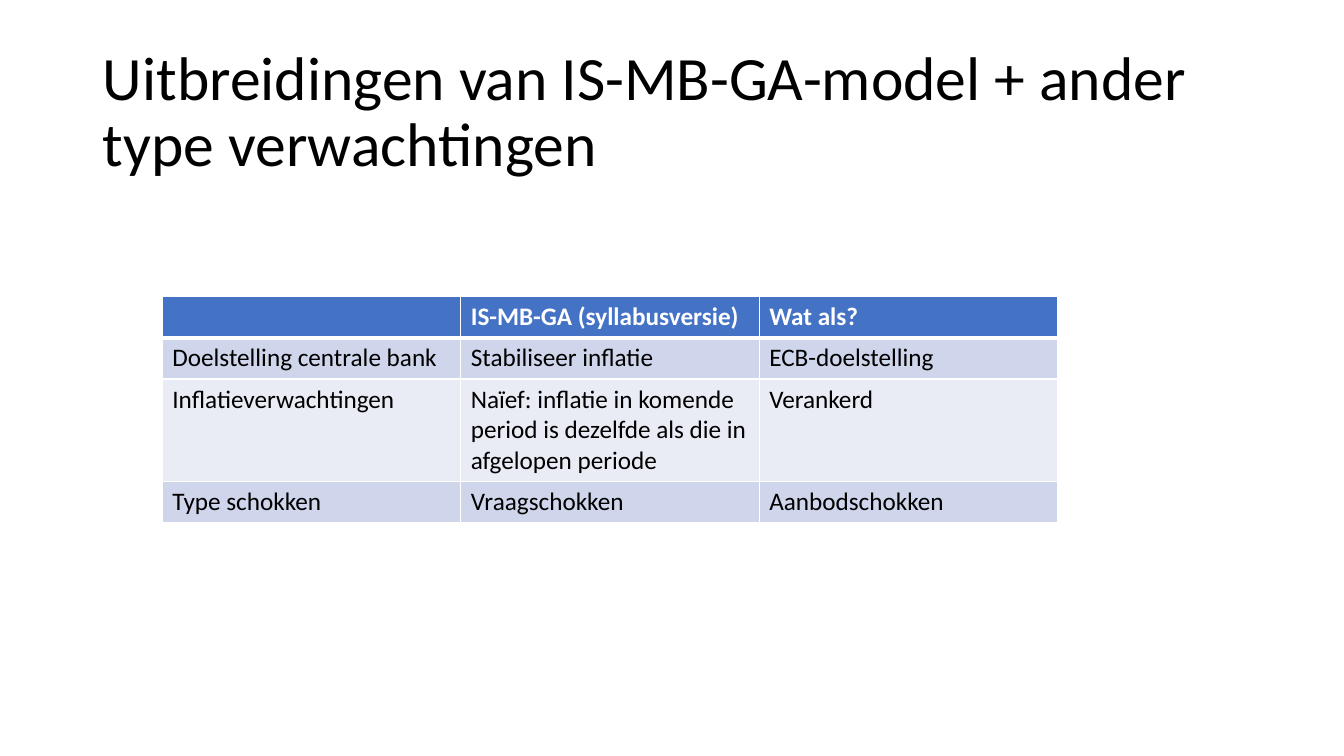
from dataclasses import dataclass

import lxml.etree
import pptx
import pptx.dml.color
import pptx.enum.text
import pptx.oxml.ns
import pptx.util

Inches = pptx.util.Inches
Pt = pptx.util.Pt


@dataclass(frozen=True)
class Theme:
    font: str = "Calibri"
    title_size: int = 44
    table_size: int = 18
    text: str = "000000"
    header_text: str = "FFFFFF"
    header_fill: str = "4472C4"
    bands: tuple = ("CFD5EA", "E9EBF5")
    border: str = "FFFFFF"
    border_width: int = 1
    header_rule: int = 3


class SlideBuilder:
    def __init__(self, presentation, theme):
        self.theme = theme
        self.slide = presentation.slides.add_slide(presentation.slide_layouts[5])

    def add_run(self, paragraph, text, size, color, bold=False):
        run = paragraph.add_run()
        run.text = text
        run.font.name = self.theme.font
        run.font.size = Pt(size)
        run.font.bold = bold
        run.font.color.rgb = pptx.dml.color.RGBColor.from_string(color)

    def title(self, text, left, top, width, height):
        title = self.slide.shapes.title
        title.left, title.top = Inches(left), Inches(top)
        title.width, title.height = Inches(width), Inches(height)
        frame = title.text_frame
        frame.word_wrap = True
        frame.auto_size = pptx.enum.text.MSO_AUTO_SIZE.NONE
        frame.vertical_anchor = pptx.enum.text.MSO_ANCHOR.MIDDLE
        paragraph = frame.paragraphs[0]
        paragraph.alignment = pptx.enum.text.PP_ALIGN.LEFT
        paragraph.line_spacing = 0.9
        self.add_run(paragraph, text, self.theme.title_size, self.theme.text)

    def cell_borders(self, cell, widths):
        properties = cell._tc.get_or_add_tcPr()
        for side, width in zip("LRTB", widths):
            line = lxml.etree.SubElement(
                properties, pptx.oxml.ns.qn(f"a:ln{side}"), w=str(Pt(width)))
            fill = lxml.etree.SubElement(line, pptx.oxml.ns.qn("a:solidFill"))
            lxml.etree.SubElement(
                fill, pptx.oxml.ns.qn("a:srgbClr"), val=self.theme.border)

    def table(self, rows, left, top, column_width, row_heights):
        theme = self.theme
        columns = len(rows[0])
        table = self.slide.shapes.add_table(
            len(rows), columns, Inches(left), Inches(top),
            Inches(column_width * columns), Inches(sum(row_heights))).table
        for column in table.columns:
            column.width = Inches(column_width)
        for r, (row, height) in enumerate(zip(rows, row_heights)):
            table.rows[r].height = Inches(height)
            header = r == 0
            fill = theme.header_fill if header else theme.bands[(r - 1) % 2]
            color = theme.header_text if header else theme.text
            above = theme.header_rule if r == 1 else theme.border_width
            below = theme.header_rule if header else theme.border_width
            for c, text in enumerate(row):
                cell = table.cell(r, c)
                self.cell_borders(
                    cell, (theme.border_width, theme.border_width, above, below))
                cell.fill.solid()
                cell.fill.fore_color.rgb = pptx.dml.color.RGBColor.from_string(fill)
                paragraph = cell.text_frame.paragraphs[0]
                if text:
                    self.add_run(paragraph, text, theme.table_size, color, header)
                else:
                    paragraph.font.size = Pt(theme.table_size)


def main():
    presentation = pptx.Presentation()
    presentation.slide_width = Inches(13.33)
    presentation.slide_height = Inches(7.5)
    builder = SlideBuilder(presentation, Theme())

    # Title
    builder.title("Uitbreidingen van IS-MB-GA-model + ander type verwachtingen",
                  0.92, 0.4, 11.5, 1.45)

    # Comparison of the syllabus model with its extensions
    model_comparison = [
        ("", "IS-MB-GA (syllabusversie)", "Wat als?"),
        ("Doelstelling centrale bank", "Stabiliseer inflatie", "ECB-doelstelling"),
        ("Inflatieverwachtingen",
         "Naïef: inflatie in komende period is dezelfde als die in afgelopen periode",
         "Verankerd"),
        ("Type schokken", "Vraagschokken", "Aanbodschokken"),
    ]
    builder.table(model_comparison, 1.61, 2.94, 2.96, (0.41, 0.41, 1.01, 0.41))

    presentation.save("out.pptx")


if __name__ == "__main__":
    main()
